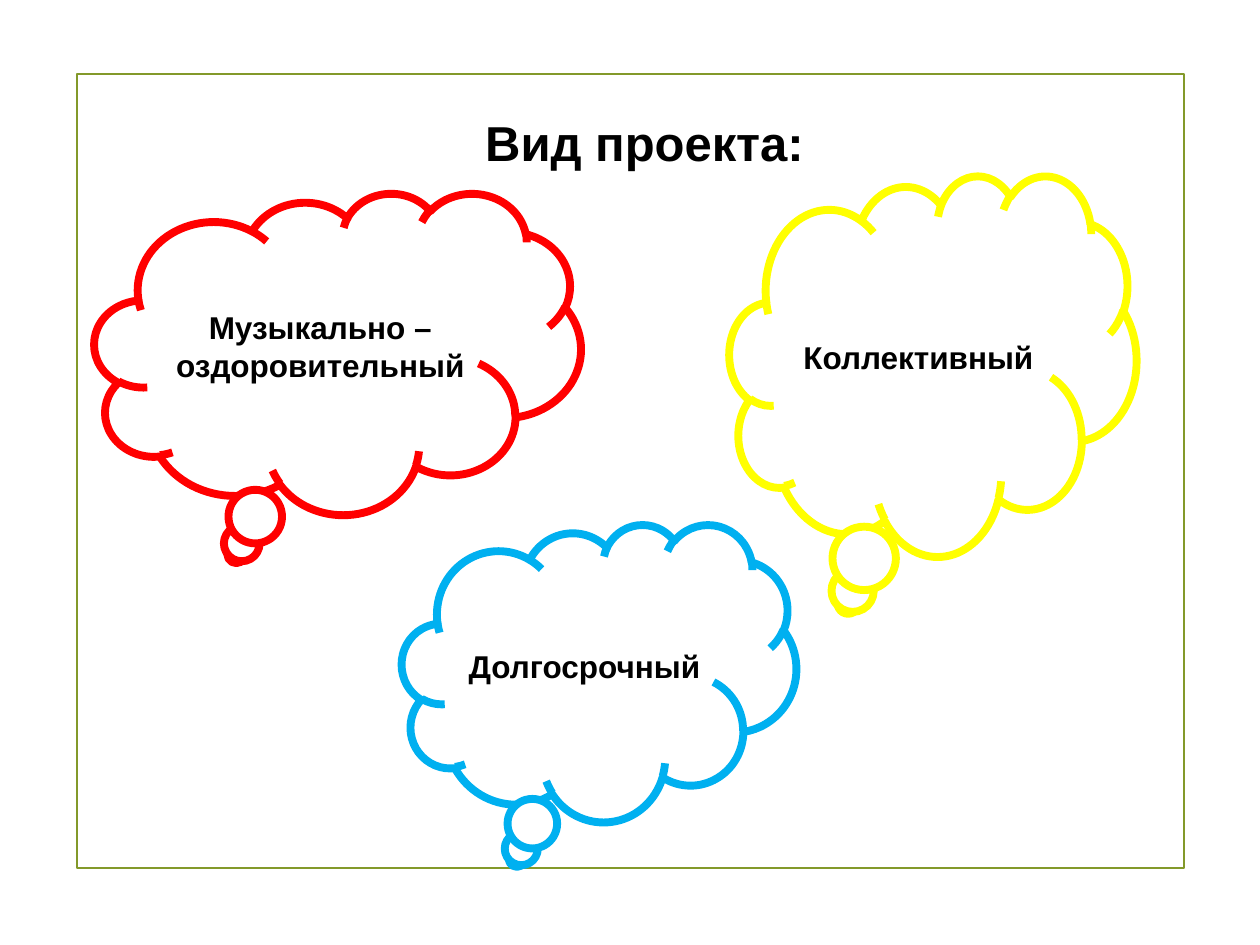
from pptx import Presentation
from pptx.dml.color import RGBColor
from pptx.enum.shapes import MSO_SHAPE
from pptx.enum.text import MSO_ANCHOR, PP_ALIGN
from pptx.util import Inches, Pt


def color(hex_value):
    return RGBColor.from_string(hex_value)


class SlideBuilder:
    text_color = "000000"
    base_font = {"name": "Arial", "bold": True}

    def __init__(self, slide):
        self.slide = slide

    def label(self, shape, text, size, align):
        frame = shape.text_frame
        frame.word_wrap = True
        frame.vertical_anchor = MSO_ANCHOR.MIDDLE
        paragraph = frame.paragraphs[0]
        paragraph.alignment = align
        run = paragraph.add_run()
        run.text = text
        for key, value in {**self.base_font, "size": Pt(size)}.items():
            setattr(run.font, key, value)
        run.font.color.rgb = color(self.text_color)

    def outline(self, kind, box, line_color, width):
        shape = self.slide.shapes.add_shape(kind, *map(Inches, box))
        shape.shadow.inherit = False
        shape.line.color.rgb = color(line_color)
        shape.line.width = Pt(width)
        return shape

    def border(self, box, line_color):
        border = self.outline(MSO_SHAPE.RECTANGLE, box, line_color, 1.25)
        border.fill.background()

    def title(self, box, text):
        heading = self.slide.shapes.title
        for side, value in zip(("left", "top", "width", "height"), box):
            setattr(heading, side, Inches(value))
        self.label(heading, text, 28, PP_ALIGN.CENTER)

    def cloud(self, box, line_color, text, align=PP_ALIGN.CENTER):
        callout = self.outline(MSO_SHAPE.CLOUD_CALLOUT, box, line_color, 4.5)
        callout.fill.solid()
        callout.fill.fore_color.rgb = color("FFFFFF")
        self.label(callout, text, 18, align)


def main():
    presentation = Presentation()
    presentation.slide_width = Inches(10)
    presentation.slide_height = Inches(7.5)
    title_only = presentation.slide_layouts[5]
    builder = SlideBuilder(presentation.slides.add_slide(title_only))

    builder.border((0.61, 0.59, 8.79, 6.3), "83992A")
    builder.title((0.98, 0.84, 8.27, 0.57), "Вид проекта:")
    builder.cloud((0.75, 1.53, 3.86, 2.55), "FF0000", "Музыкально – оздоровительный")
    builder.cloud((5.79, 1.39, 3.23, 3.02), "FFFF00", "Коллективный")
    builder.cloud((3.19, 4.16, 3.13, 2.36), "00B0F0", "Долгосрочный", PP_ALIGN.LEFT)

    presentation.save("out.pptx")


if __name__ == "__main__":
    main()
